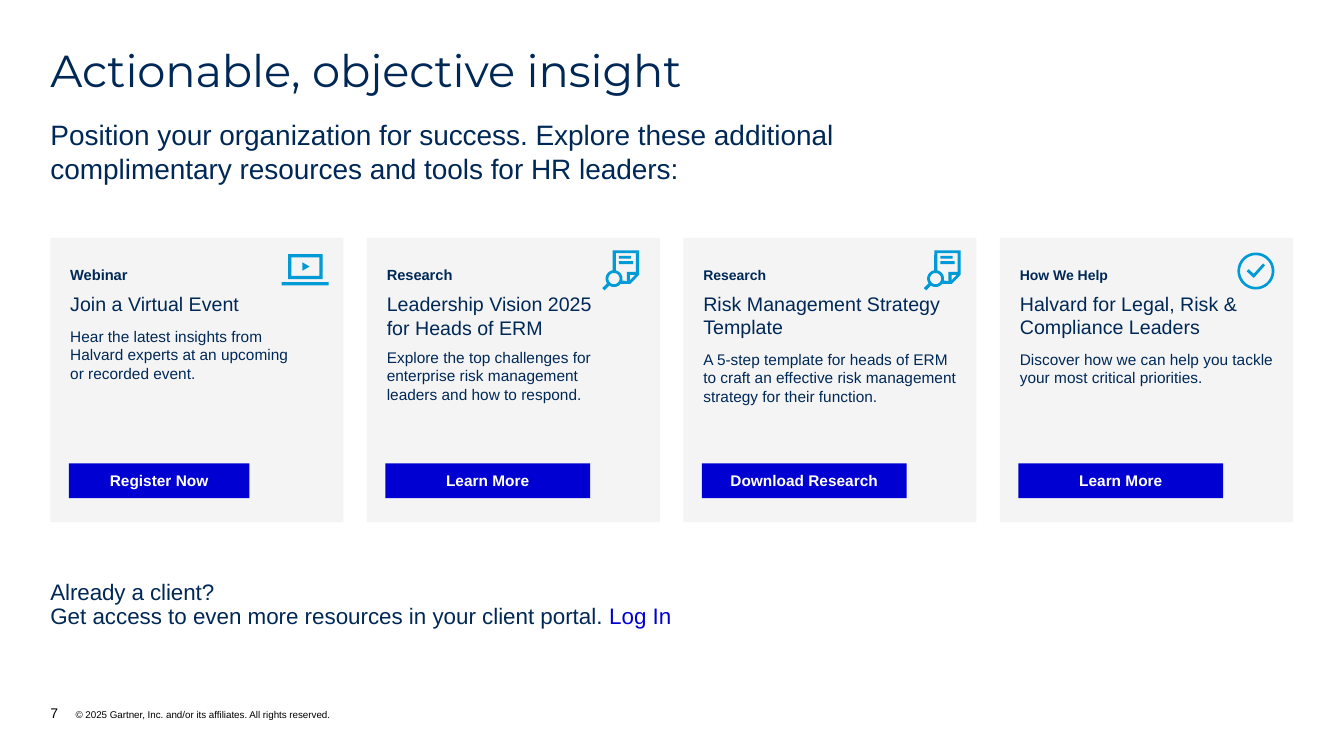
"""Build the slide that lists further resources as four cards."""
from copy import deepcopy
from math import cos, radians, sin

from pptx import Presentation
from pptx.dml.color import RGBColor
from pptx.enum.shapes import MSO_SHAPE
from pptx.enum.text import MSO_ANCHOR, MSO_AUTO_SIZE, PP_ALIGN
from pptx.util import Pt

NAVY = RGBColor(0x00, 0x28, 0x56)
BLUE = RGBColor(0x00, 0x00, 0xD3)
SKY = RGBColor(0x00, 0x9A, 0xD7)
PALE = RGBColor(0xF4, 0xF4, 0xF4)
WHITE = RGBColor(0xFF, 0xFF, 0xFF)
BLACK = RGBColor(0x00, 0x00, 0x00)

MARGIN, CONTENT_WIDTH = 36, 888
CARD_TOP, CARD_WIDTH, CARD_HEIGHT, CARD_PITCH = 170, 209.3, 203, 226.1
BUTTON_INDENT, BUTTON_TOP, BUTTON_HEIGHT = 13.2, 331, 24.8


def write(para, text, size=11, color=NAVY, bold=False, face="Arial", tracking=0):
    """Append text to a paragraph, turning each newline into a line break."""
    for index, line in enumerate(text.split("\n")):
        if index:
            para.add_line_break()
            para._p[-1].append(deepcopy(span.font._element))
        span = para.add_run()
        span.text = line
        font = span.font
        font.name, font.size, font.bold = face, Pt(size), bold
        font.color.rgb = color
        if tracking:
            font._element.set("spc", str(round(tracking * 100)))


def rectangle(left, top, right, bottom):
    """Return the corners of a rectangle."""
    return [(left, top), (right, top), (right, bottom), (left, bottom)]


def arc(x, y, radius, start=0, end=360, step=6):
    """Return points along a circular arc, clockwise in degrees."""
    return [(x + radius * cos(radians(angle)), y + radius * sin(radians(angle)))
            for angle in range(start, end + 1, step)]


LAPTOP = [
    rectangle(0, 20, 33.5, 22.2),
    rectangle(4.7, 0, 29.3, 17.8),
    rectangle(7, 2.2, 27, 15.5),
    [(14.8, 5.8), (14.8, 11.8), (20, 8.8)],
]
CHECK = [
    arc(13.2, 13.2, 13.2),
    arc(13.2, 13.2, 11.3),
    [(18.3, 7.8), (19.7, 9.2), (11.7, 18.2), (6.6, 13.4), (8, 11.9), (11.6, 15.2)],
]
DOCUMENT = [
    [(7.5, 0), (26.3, 0), (26.3, 17.5), (20, 24)]
    + arc(8.4, 20.2, 6, 40, 124) + [(1.7, 28.6), (0, 27)]
    + arc(8.4, 20.2, 6, 146, 260),
    arc(8.4, 20.2, 4),
    [(17.6, 22), (17.6, 15.4), (24.1, 15.4), (24.1, 2), (9.7, 2)]
    + arc(8.4, 20.2, 6, -77, 17),
    [(23.6, 17.5), (19.8, 17.5), (19.8, 21.4)],
    rectangle(11.9, 4, 20.5, 6),
    rectangle(11.9, 7.8, 22, 9.8),
]

CARDS = [
    ("Webinar", 10.5, "Join a Virtual Event",
     "Hear the latest insights from\nHalvard experts at an upcoming\nor recorded event.",
     8, "Register Now", 129, LAPTOP, 201.2, 181.6),
    ("Research", 10.5, "Leadership Vision 2025\nfor Heads of ERM",
     "Explore the top challenges for enterprise risk management\n"
     "leaders and how to respond.",
     6, "Learn More", 146.2, DOCUMENT, 430.2, 178.8),
    ("Research", 10, "Risk Management Strategy Template",
     "A 5-step template for heads of ERM\nto craft an effective risk management "
     "strategy for their function.",
     8, "Download Research", 146.2, DOCUMENT, 659.9, 178.8),
    ("How We Help", 10, "Halvard for Legal, Risk & Compliance Leaders",
     "Discover how we can help you tackle your most critical priorities.",
     8, "Learn More", 146.2, CHECK, 883.9, 180.4),
]


class ResourcePage:
    """Hold the current slide and draw its kinds of element."""

    def __init__(self, page):
        """Keep the slide to draw on."""
        self.page = page

    def frame(self, shape, left=0, top=0, anchor=MSO_ANCHOR.TOP):
        """Prepare the text frame of a shape and return its first paragraph."""
        frame = shape.text_frame
        frame.word_wrap, frame.auto_size = True, MSO_AUTO_SIZE.NONE
        frame.vertical_anchor = anchor
        frame.margin_left, frame.margin_top = Pt(left), Pt(top)
        frame.margin_right = frame.margin_bottom = 0
        para = frame.paragraphs[0]
        para.alignment = PP_ALIGN.LEFT
        return para

    def title(self, text):
        """Place the slide title."""
        box = self.page.shapes.title
        box.left, box.top = Pt(MARGIN), Pt(29)
        box.width, box.height = Pt(CONTENT_WIDTH), Pt(40)
        write(self.frame(box, top=1.7), text, size=32, face="Montserrat", tracking=-0.1)

    def text_box(self, top, width, height, inset=0, anchor=MSO_ANCHOR.TOP):
        """Add a text box at the margin and return its first paragraph and frame."""
        box = self.page.shapes.add_textbox(Pt(MARGIN), Pt(top), Pt(width), Pt(height))
        return self.frame(box, top=inset, anchor=anchor), box.text_frame

    def block(self, left, top, width, height, color):
        """Add a plain filled rectangle."""
        box = self.page.shapes.add_shape(
            MSO_SHAPE.RECTANGLE, Pt(left), Pt(top), Pt(width), Pt(height))
        self.paint(box, color)
        return box

    def paint(self, shape, color):
        """Fill a shape and remove its line and shadow."""
        shape.shadow.inherit = False
        shape.fill.solid()
        shape.fill.fore_color.rgb = color
        shape.line.fill.background()

    def icon(self, left, top, contours):
        """Draw contours as one shape whose inner contours are cut out."""
        builder = None
        for contour in contours:
            points = [(Pt(x), Pt(y)) for x, y in contour]
            if builder is None:
                builder = self.page.shapes.build_freeform(*points[0], scale=1.0)
            else:
                builder.move_to(*points[0])
            builder.add_line_segments(points[1:], close=True)
        self.paint(builder.convert_to_shape(Pt(left), Pt(top)), SKY)

    def card(self, left, kind, kind_size, heading, summary, gap, action,
             button_width, contours, icon_left, icon_top):
        """Add one resource card with its button and icon."""
        panel = self.block(left, CARD_TOP, CARD_WIDTH, CARD_HEIGHT, PALE)
        para = self.frame(panel, left=14.2, top=20.2)
        para.space_after = Pt(6)
        write(para, kind, size=kind_size, bold=True)
        for text, size in ((heading, 14), (summary, 11)):
            para = panel.text_frame.add_paragraph()
            para.alignment, para.space_after = PP_ALIGN.LEFT, Pt(gap)
            write(para, text, size=size)
        button = self.block(left + BUTTON_INDENT, BUTTON_TOP, button_width,
                            BUTTON_HEIGHT, BLUE)
        para = self.frame(button, anchor=MSO_ANCHOR.MIDDLE)
        para.alignment = PP_ALIGN.CENTER
        write(para, action, color=WHITE, bold=True)
        self.icon(icon_left, icon_top, contours)

    def client_note(self):
        """Add the invitation to log in."""
        para, frame = self.text_box(414, 475, 35, inset=1.7)
        write(para, "Already a client?", size=16, tracking=-0.05)
        portal = frame.add_paragraph()
        write(portal, "Get access to even more resources in your client portal. ", size=16)
        write(portal, "Log In", size=16, color=BLUE)
        for para in frame.paragraphs:
            para.line_spacing = Pt(16.6)

    def footer(self):
        """Add the page number and the copyright line."""
        para, _ = self.text_box(503.3, 575, 12.2, anchor=MSO_ANCHOR.BOTTOM)
        layout = para._p.get_or_add_pPr()
        layout.set("marL", str(Pt(18)))
        layout.set("indent", str(-Pt(18)))
        write(para, "7", size=10, color=BLACK)
        write(para, "\t© 2025 Gartner, Inc. and/or its affiliates. All rights reserved.",
              size=7, color=BLACK)


def main():
    """Build and save the deck."""
    deck = Presentation()
    deck.slide_width, deck.slide_height = Pt(960), Pt(540)
    resources = ResourcePage(deck.slides.add_slide(deck.slide_layouts[5]))
    resources.title("Actionable, objective insight")
    para, _ = resources.text_box(80, CONTENT_WIDTH, 50, inset=4)
    write(para, "Position your organization for success. Explore these additional\n"
          "complimentary resources and tools for HR leaders:", size=20, tracking=-0.05)
    for index, card in enumerate(CARDS):
        resources.card(MARGIN + index * CARD_PITCH, *card)
    resources.client_note()
    resources.footer()
    deck.save("out.pptx")


if __name__ == "__main__":
    main()
